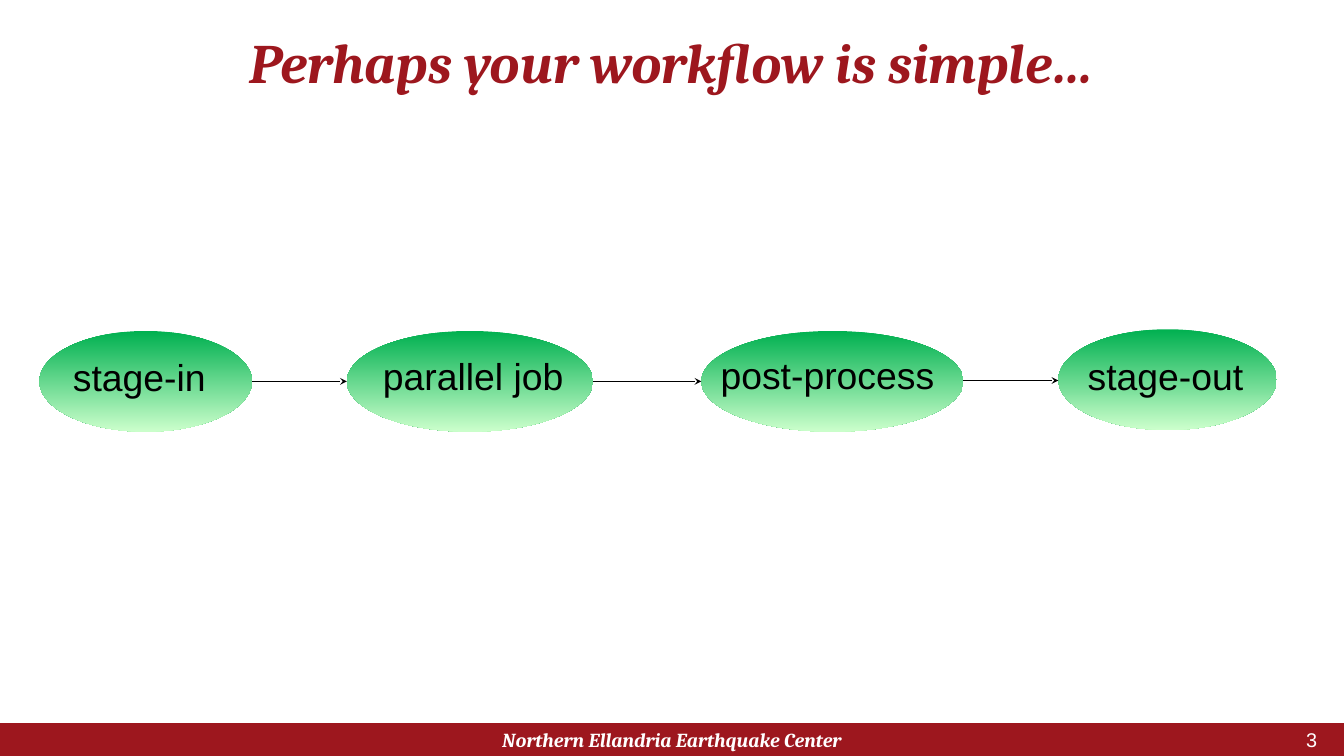
import dataclasses

import pptx
import pptx.dml.color
import pptx.enum.shapes
import pptx.enum.text
import pptx.oxml
import pptx.oxml.ns
import pptx.util
from pptx.util import Inches

COLORS = {
    "red": "9D171E",
    "white": "FFFFFF",
    "black": "000000",
    "green": "00B050",
    "pale_green": "CCFFCC",
}
ALIGN = pptx.enum.text.PP_ALIGN
ANCHOR = pptx.enum.text.MSO_ANCHOR
SHAPE = pptx.enum.shapes.MSO_SHAPE
STAGE_HEIGHT = 1.2


@dataclasses.dataclass
class Style:
    size: float
    font: str
    color: str
    align: ALIGN = ALIGN.LEFT
    anchor: ANCHOR = ANCHOR.TOP
    bold_italic: bool = False
    inset: tuple[float, float] = (0.12, 0.06)


@dataclasses.dataclass
class Stage:
    name: str
    left: float
    top: float
    width: float
    label_left: float
    label_top: float
    label_width: float


TITLE = Style(47.7, "Cambria", "red", ALIGN.CENTER, bold_italic=True)
FOOTER = Style(17, "Cambria", "white", ALIGN.CENTER, ANCHOR.MIDDLE, True)
NUMBER = Style(17, "Arial", "white", ALIGN.RIGHT, ANCHOR.MIDDLE)
LABEL = Style(32, "Arial", "black", inset=(0.1, 0.05))

STAGES = [
    Stage("stage-in", 0.47, 3.94, 2.53, 0.77, 4.17, 2.13),
    Stage("parallel job", 4.13, 3.94, 2.93, 4.46, 4.16, 2.67),
    Stage("post-process", 8.35, 3.94, 3.12, 8.48, 4.14, 2.93),
    Stage("stage-out", 12.6, 3.92, 2.6, 12.85, 4.15, 2.33),
]


def rgb(name: str) -> pptx.dml.color.RGBColor:
    return pptx.dml.color.RGBColor.from_string(COLORS[name])


def write(sp, text: str, style: Style) -> None:
    tf = sp.text_frame
    tf.text = text
    tf.word_wrap = True
    tf.auto_size = pptx.enum.text.MSO_AUTO_SIZE.NONE
    tf.vertical_anchor = style.anchor
    tf.margin_left = tf.margin_right = Inches(style.inset[0])
    tf.margin_top = tf.margin_bottom = Inches(style.inset[1])
    p = tf.paragraphs[0]
    p.alignment = style.align
    font = p.runs[0].font
    font.size = pptx.util.Pt(style.size)
    font.name = style.font
    font.color.rgb = rgb(style.color)
    font.bold = font.italic = style.bold_italic


def add_text(slide, text: str, style: Style, left: float, top: float,
             width: float, height: float) -> None:
    sp = slide.shapes.add_textbox(
        Inches(left), Inches(top), Inches(width), Inches(height))
    write(sp, text, style)


def add_plain_shape(slide, kind: SHAPE, left: float, top: float,
                    width: float, height: float):
    """Add a preset shape without outline or shadow."""
    sp = slide.shapes.add_shape(
        kind, Inches(left), Inches(top), Inches(width), Inches(height))
    sp.shadow.inherit = False
    sp.line.fill.background()
    return sp


def add_title(slide, text: str) -> None:
    sp = slide.shapes.title
    sp.left, sp.top = Inches(0.4), Inches(0.36)
    sp.width, sp.height = Inches(15.2), Inches(0.84)
    write(sp, text, TITLE)
    sp.text_frame.paragraphs[0].line_spacing = 0.9


def add_stage(slide, stage: Stage) -> None:
    sp = add_plain_shape(slide, SHAPE.OVAL, stage.left, stage.top,
                         stage.width, STAGE_HEIGHT)
    sp.fill.gradient()
    sp.fill.gradient_angle = 270
    for stop, color in zip(sp.fill.gradient_stops, ("green", "pale_green")):
        stop.color.rgb = rgb(color)
    add_text(slide, stage.name, LABEL, stage.label_left, stage.label_top,
             stage.label_width, 0.64)


def add_arrow(slide, start: Stage, end: Stage) -> None:
    """Draw a level arrow from the right of one stage to the left of the next."""
    y = Inches((start.top + end.top + STAGE_HEIGHT) / 2)
    cxn = slide.shapes.add_connector(
        pptx.enum.shapes.MSO_CONNECTOR.STRAIGHT,
        Inches(start.left + start.width), y, Inches(end.left), y)
    cxn.line.color.rgb = rgb("black")
    cxn.line.width = pptx.util.Pt(1)
    ln = cxn.line._get_or_add_ln()
    tail = pptx.oxml.parse_xml(
        f'<a:tailEnd {pptx.oxml.ns.nsdecls("a")} type="stealth"/>')
    ln.append(tail)
    ln.addnext(pptx.oxml.parse_xml(
        f'<a:effectLst {pptx.oxml.ns.nsdecls("a")}/>'))


def main() -> None:
    prs = pptx.Presentation()
    prs.slide_width, prs.slide_height = Inches(16), Inches(9)
    slide = prs.slides.add_slide(prs.slide_layouts.get_by_name("Title Only"))

    band = add_plain_shape(slide, SHAPE.RECTANGLE, 0, 8.61, 16, 0.39)
    band.fill.solid()
    band.fill.fore_color.rgb = rgb("red")
    add_title(slide, "Perhaps your workflow is simple…")
    add_text(slide, "3", NUMBER, 14.3, 8.69, 1.5, 0.24)
    for stage in STAGES:
        add_stage(slide, stage)
    for start, end in zip(STAGES, STAGES[1:]):
        add_arrow(slide, start, end)
    add_text(slide, "Northern Ellandria Earthquake Center", FOOTER,
             5.3, 8.57, 5.4, 0.48)

    prs.save("out.pptx")


if __name__ == "__main__":
    main()
